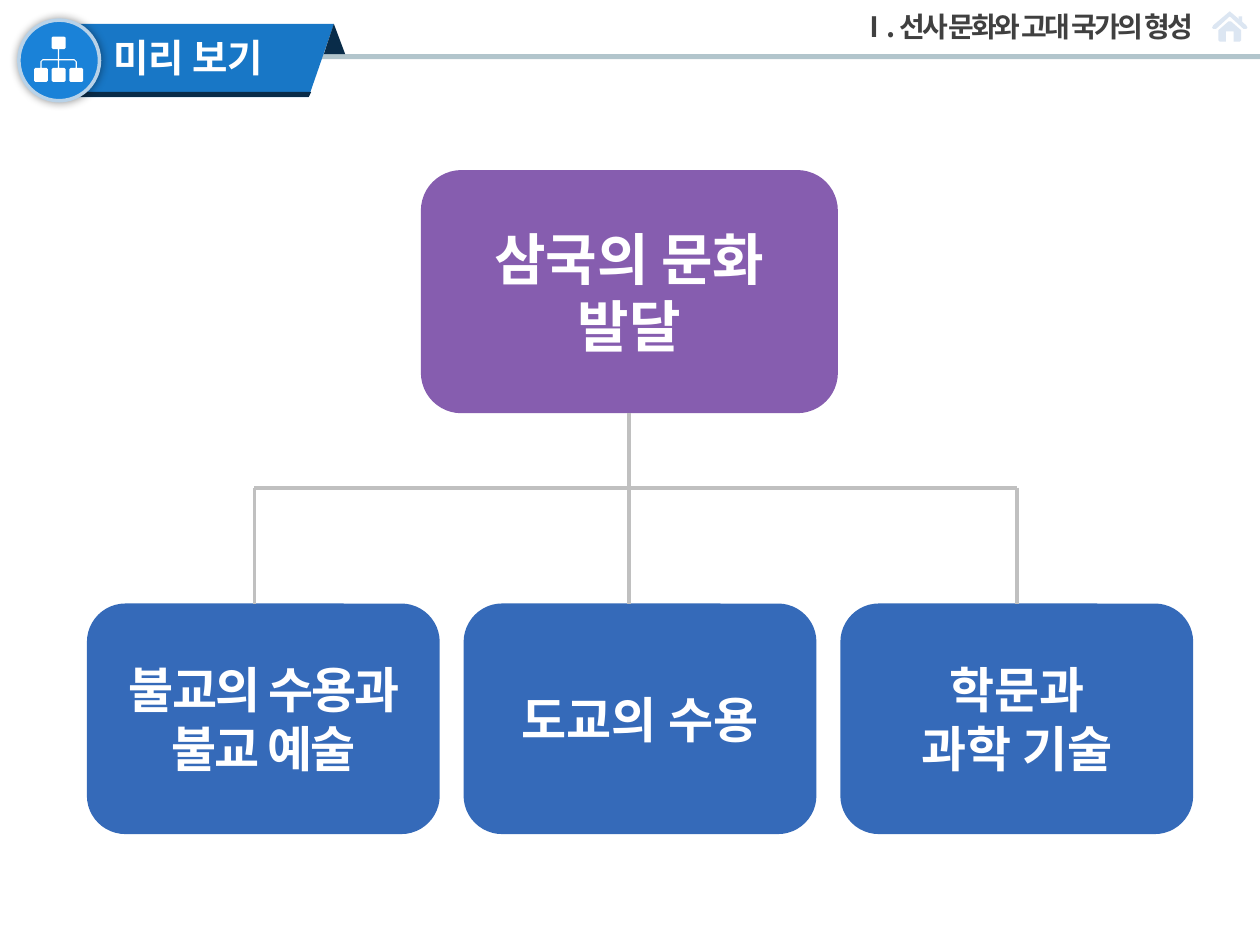
"""Build the preview slide on the cultural growth of the Three Kingdoms."""
from lxml.etree import SubElement
from pptx import Presentation
from pptx.dml.color import RGBColor
from pptx.enum.shapes import MSO_CONNECTOR, MSO_SHAPE
from pptx.enum.text import MSO_ANCHOR, PP_ALIGN
from pptx.oxml.ns import qn
from pptx.util import Inches, Pt

FONT = "Noto Sans CJK KR"


def paint(shape, color):
    shape.shadow.inherit = False
    shape.fill.solid()
    shape.fill.fore_color.rgb = RGBColor.from_string(color)
    shape.line.fill.background()


def write(shape, text, size, color, align, spacing=0):
    frame = shape.text_frame
    frame.word_wrap = True
    frame.vertical_anchor = MSO_ANCHOR.MIDDLE
    frame.text = text
    for paragraph in frame.paragraphs:
        paragraph.alignment = align
        font = paragraph.font
        font.name, font.size, font.bold = FONT, Pt(size), True
        font.color.rgb = RGBColor.from_string(color)
        defaults = paragraph._p.pPr.find(qn("a:defRPr"))
        SubElement(defaults, qn("a:ea")).set("typeface", FONT)
        if spacing:
            defaults.set("spc", str(spacing))


prs = Presentation()
prs.slide_width, prs.slide_height = Inches(10), Inches(7.5)
shapes = prs.slides.add_slide(prs.slide_layouts[6]).shapes

chapter = shapes.add_textbox(Inches(5.86), 0, Inches(3.69), Inches(0.42))
write(chapter, "Ⅰ. 선사 문화와 고대 국가의 형성", 16, "404040", PP_ALIGN.RIGHT, -150)
chapter.text_frame.margin_left = chapter.text_frame.margin_top = 0
chapter.text_frame.margin_right = Inches(0.08)
chapter.text_frame.margin_bottom = 0

for left, top, width, height, color in [
    (9.83, 0.13, 0.03, 0.06, "DCE6F2"),
    (0.39, 0.43, 9.61, 0.04, "B2C5CC"),
]:
    bar = shapes.add_shape(
        MSO_SHAPE.RECTANGLE, Inches(left), Inches(top), Inches(width), Inches(height))
    paint(bar, color)

badge = shapes.add_shape(
    MSO_SHAPE.OVAL, Inches(0.15), Inches(0.16), Inches(0.64), Inches(0.64))
paint(badge, "1A82D8")
badge.line.color.rgb = RGBColor.from_string("B8D2E8")
badge.line.width = Pt(2)
glow = SubElement(badge._element.spPr.find(qn("a:effectLst")), qn("a:outerShdw"))
glow.set("blurRad", str(Pt(5)))
glow_color = SubElement(glow, qn("a:srgbClr"))
glow_color.set("val", "000000")
SubElement(glow_color, qn("a:alpha")).set("val", "40000")

roof_half = [(9.76, 0.09), (9.63, 0.2), (9.62, 0.22), (9.63, 0.23), (9.65, 0.23),
             (9.76, 0.13)]
house_half = [(9.75, 0.17), (9.67, 0.24), (9.67, 0.32), (9.68, 0.33), (9.73, 0.33),
              (9.73, 0.25)]
tree_half = [(0.42, 0.29), (0.41, 0.3), (0.41, 0.38), (0.42, 0.39), (0.46, 0.39),
             (0.46, 0.47), (0.34, 0.47), (0.32, 0.49), (0.32, 0.54), (0.28, 0.54),
             (0.27, 0.55), (0.27, 0.64), (0.28, 0.65), (0.37, 0.65), (0.38, 0.64),
             (0.38, 0.55), (0.37, 0.54), (0.33, 0.54), (0.33, 0.49), (0.34, 0.48),
             (0.46, 0.48), (0.46, 0.54), (0.42, 0.54), (0.41, 0.55), (0.41, 0.64),
             (0.42, 0.65)]
outlines = [
    ([(0.53, 0.19), (2.65, 0.19), (2.45, 0.77), (0.53, 0.77)], "1877C6"),
    ([(0.53, 0.73), (2.47, 0.73), (2.45, 0.77), (0.53, 0.77)], "092C49"),
    ([(2.65, 0.19), (2.74, 0.43), (2.57, 0.43)], "092C49"),
]
for half, mirror_sum, color in [
    (roof_half, 19.52, "DCE6F2"),
    (house_half, 19.52, "DCE6F2"),
    (tree_half, 0.93, "FFFFFF"),
]:
    outlines.append((half + [(mirror_sum - x, y) for x, y in reversed(half)], color))

for points, color in outlines:
    corners = [(Inches(x), Inches(y)) for x, y in points]
    builder = shapes.build_freeform(*corners[0])
    builder.add_line_segments(corners[1:])
    paint(builder.convert_to_shape(), color)
    if points[0] == (2.65, 0.19):
        shapes._spTree.append(badge._element)

heading = shapes.add_textbox(Inches(0.8), Inches(0.22), Inches(1.66), Inches(0.47))
write(heading, "미리 보기", 22, "FFFFFF", PP_ALIGN.LEFT)
heading.text_frame.margin_top = heading.text_frame.margin_bottom = 0

topics = []
for text, left, top, width, height, color, size, spacing in [
    ("삼국의 문화 발달", 3.34, 1.35, 3.31, 1.93, "865DAF", 32, 0),
    ("불교의 수용과 불교 예술", 0.69, 4.79, 2.8, 1.83, "356AB9", 28, -100),
    ("도교의 수용", 3.68, 4.79, 2.8, 1.83, "356AB9", 28, 0),
    ("학문과\n과학 기술", 6.67, 4.79, 2.8, 1.83, "356AB9", 28, 0),
]:
    topic = shapes.add_shape(
        MSO_SHAPE.ROUNDED_RECTANGLE,
        Inches(left), Inches(top), Inches(width), Inches(height))
    paint(topic, color)
    write(topic, text, size, "FFFFFF", PP_ALIGN.CENTER, spacing)
    topics.append(topic)

root, science = topics[0], topics[-1]
root_middle = root.left + root.width // 2
science_middle = science.left + science.width // 2
branch_left, branch_top, branch_bottom = Inches(2.02), Inches(3.87), Inches(4.79)
for x1, y1, x2, y2, parent, child in [
    (branch_left, branch_top, science_middle, branch_top, None, None),
    (root_middle, Inches(3.28), root_middle, branch_bottom, root, None),
    (science_middle, branch_top, science_middle, branch_bottom, None, science),
    (branch_left, branch_top, branch_left, branch_bottom, None, None),
]:
    branch = shapes.add_connector(MSO_CONNECTOR.STRAIGHT, x1, y1, x2, y2)
    branch.line.color.rgb = RGBColor.from_string("C0C0C0")
    branch.line.width = Pt(2.25)
    SubElement(branch._element.spPr, qn("a:effectLst"))
    if parent:
        branch.begin_connect(parent, 2)
    if child:
        branch.end_connect(child, 0)

prs.save("out.pptx")
